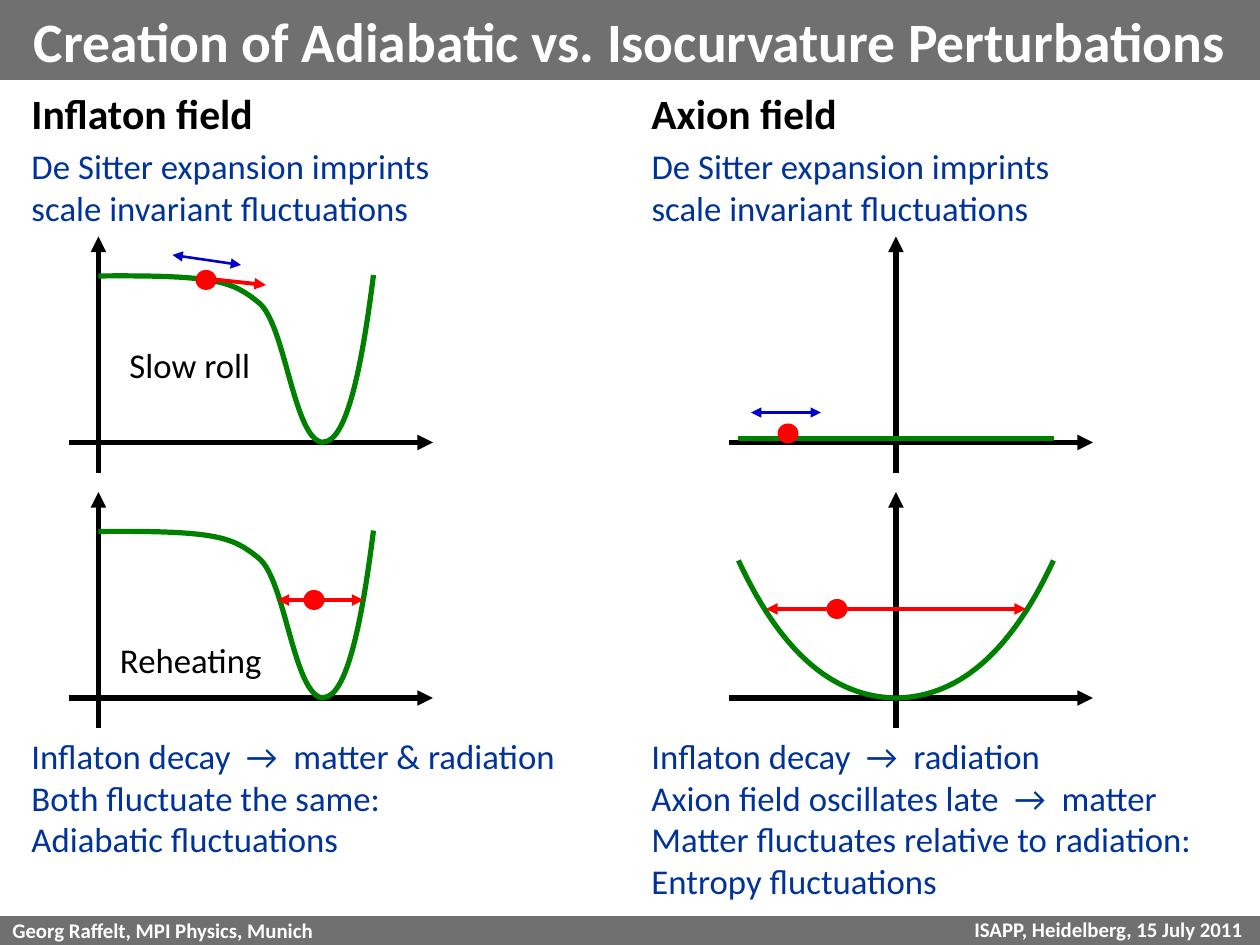
from lxml import etree
from pptx import Presentation
from pptx.dml.color import RGBColor
from pptx.enum.shapes import MSO_CONNECTOR, MSO_SHAPE
from pptx.enum.text import MSO_ANCHOR, PP_ALIGN
from pptx.oxml.ns import qn
from pptx.util import Inches, Pt

STRAIGHT = MSO_CONNECTOR.STRAIGHT
RECTANGLE, OVAL = MSO_SHAPE.RECTANGLE, MSO_SHAPE.OVAL
LEFT, CENTER, RIGHT = PP_ALIGN.LEFT, PP_ALIGN.CENTER, PP_ALIGN.RIGHT
TOP, MIDDLE = MSO_ANCHOR.TOP, MSO_ANCHOR.MIDDLE

GREY, WHITE, BLACK = "707070", "FFFFFF", "000000"
GREEN, RED, BLUE, NAVY = "008000", "FF0000", "0000CC", "003399"
color = RGBColor.from_string

COLUMNS, ROWS = 126, 94.5
deck = Presentation()
deck.slide_width, deck.slide_height = Inches(10.08), Inches(7.56)
CELL = deck.slide_width / COLUMNS
slide = deck.slides.add_slide(deck.slide_layouts[6])
shapes = slide.shapes


def write(box, lines, size, ink, bold=False, align=LEFT, anchor=MIDDLE, inset=1.15):
    frame = box.text_frame
    frame.word_wrap = True
    frame.vertical_anchor = anchor
    frame.margin_left = frame.margin_right = int(inset * CELL)
    frame.margin_top = frame.margin_bottom = Inches(0.05) if size > 12 else 0
    for number, line in enumerate(lines):
        paragraph = frame.paragraphs[0] if number == 0 else frame.add_paragraph()
        paragraph.alignment = align
        run = paragraph.add_run()
        run.text = line
        run.font.name = "Calibri"
        run.font.size = Pt(size)
        run.font.bold = bold
        run.font.color.rgb = color(ink)


def draw_line(start, end, ink, width, heads=()):
    ends = [int(value * CELL) for value in (*start, *end)]
    line = shapes.add_connector(STRAIGHT, *ends)
    line.line.color.rgb = color(ink)
    line.line.width = Pt(width)
    outline = line.line._get_or_add_ln()
    for head in heads:
        etree.SubElement(outline, qn(f"a:{head}"), type="triangle")
    etree.SubElement(line._element.spPr, qn("a:effectLst"))


ONE_WAY, BOTH_WAYS = ("tailEnd",), ("headEnd", "tailEnd")

bars = [
    (0, 8, "Creation of Adiabatic vs. Isocurvature Perturbations", 32, CENTER),
    (91.6, ROWS - 91.6, "Georg Raffelt, MPI Physics, Munich", 12, LEFT),
]
for top, height, label, size, align in bars:
    bar = shapes.add_shape(RECTANGLE, 0, int(top * CELL), deck.slide_width, int(height * CELL))
    bar.shadow.inherit = False
    bar.fill.solid()
    bar.fill.fore_color.rgb = color(GREY)
    bar.line.fill.background()
    write(bar, [label], size, WHITE, True, align, inset=1.25)

imprint = ["De Sitter expansion imprints", "scale invariant fluctuations"]
inflaton_result = [
    "Inflaton decay  →  matter & radiation",
    "Both fluctuate the same:",
    "Adiabatic fluctuations",
]
axion_result = [
    "Inflaton decay  →  radiation",
    "Axion field oscillates late  →  matter",
    "Matter fluctuates relative to radiation:",
    "Entropy fluctuations",
]
INFLATON_LEFT, AXION_LEFT = 2, 64
captions = [
    (63, 91.4, 63, 3, ["ISAPP, Heidelberg, 15 July 2011"], 12, WHITE, True, RIGHT, MIDDLE, 1.75),
    (11.8, 33.5, 17, 5.9, ["Slow roll"], 20, BLACK),
    (10.85, 63, 18.75, 5.9, ["Reheating"], 20, BLACK),
]
for left, field, result in [
    (INFLATON_LEFT, "Inflaton field", inflaton_result),
    (AXION_LEFT, "Axion field", axion_result),
]:
    captions += [
        (left, 7.8, 60, 6.9, [field], 24, BLACK, True),
        (left, 14.7, 45.25, 7.9, imprint, 20, NAVY),
        (left, 72.85, 60, 17.75, result, 20, NAVY, False, LEFT, TOP),
    ]
for left, top, width, height, *content in captions:
    box = shapes.add_textbox(*[int(value * CELL) for value in (left, top, width, height)])
    write(box, *content)

plateau_well = [
    [(0, 16.65), (11.75, 16.75), (13.38, 16.13), (16, 14),
     (18.75, 11.88), (19.5, 0), (22.55, 0)],
    [(27.5, 16.75), (26.38, 7.9), (24.88, 0.1), (22.5, 0.05)],
]
half_bowl = [(-15.75, 13.75), (-12.38, 6.5), (-7.5, 0.1), (0, 0)]
bowl = [half_bowl, [(-x, y) for x, y in half_bowl]]
flat = ((-15.75, 0.4), (15.75, 0.4), GREEN, 3)

INFLATON_AXIS, AXION_AXIS = 9.85, 89.6
EARLY, LATE = 44.25, 69.8
BEFORE_INFLATON, BEFORE_AXION = 2.95, 16.7
AXIS_LENGTH = 36.4
BALL_WIDTH, BALL_HEIGHT = 2.1, 2

panels = [
    (INFLATON_AXIS, EARLY, BEFORE_INFLATON, plateau_well, (10.75, 16.25), [
        ((10.65, 16.4), (16.75, 15.75), RED, 2.25, ONE_WAY),
        ((7.4, 18.75), (14.25, 17.75), BLUE, 1.5, BOTH_WAYS)]),
    (INFLATON_AXIS, LATE, BEFORE_INFLATON, plateau_well, (21.55, 9.8), [
        ((17.9, 9.8), (26.5, 9.8), RED, 2.25, BOTH_WAYS)]),
    (AXION_AXIS, EARLY, BEFORE_AXION, [], (-10.8, 0.9), [
        flat,
        ((-14.5, 3), (-7.5, 3), BLUE, 1.5, BOTH_WAYS)]),
    (AXION_AXIS, LATE, BEFORE_AXION, bowl, (-5.9, 8.9), [
        ((-13, 8.9), (13, 8.9), RED, 2.25, BOTH_WAYS)]),
]
for axis, base, before, potential, (ball_x, ball_y), motions in panels:
    draw_line((axis - before, base), (axis - before + AXIS_LENGTH, base), BLACK, 3, ONE_WAY)
    draw_line((axis, base + 3), (axis, base - 20.6), BLACK, 3, ONE_WAY)

    for branch in potential:
        points = [(int((axis + x) * CELL), int((base - y) * CELL)) for x, y in branch]
        builder = shapes.build_freeform(*points[0])
        builder.add_line_segments(points[1:], close=False)
        curve = builder.convert_to_shape()
        curve.shadow.inherit = False
        curve.fill.background()
        curve.line.color.rgb = color(GREEN)
        curve.line.width = Pt(3)
        outline = next(curve._element.iter(qn("a:path")))
        segments = outline.findall(qn("a:lnTo"))
        for first in range(0, len(segments), 3):
            bend = etree.SubElement(outline, qn("a:cubicBezTo"))
            for segment in segments[first:first + 3]:
                bend.append(segment[0])
                outline.remove(segment)

    for start, end, *style in motions:
        draw_line(*[(axis + x, base - y) for x, y in (start, end)], *style)

    corner = (axis + ball_x - BALL_WIDTH / 2, base - ball_y - BALL_HEIGHT / 2)
    ball = shapes.add_shape(OVAL, *[int(v * CELL) for v in (*corner, BALL_WIDTH, BALL_HEIGHT)])
    ball.shadow.inherit = False
    ball.fill.solid()
    ball.fill.fore_color.rgb = color(RED)
    ball.line.fill.background()

deck.save("out.pptx")
